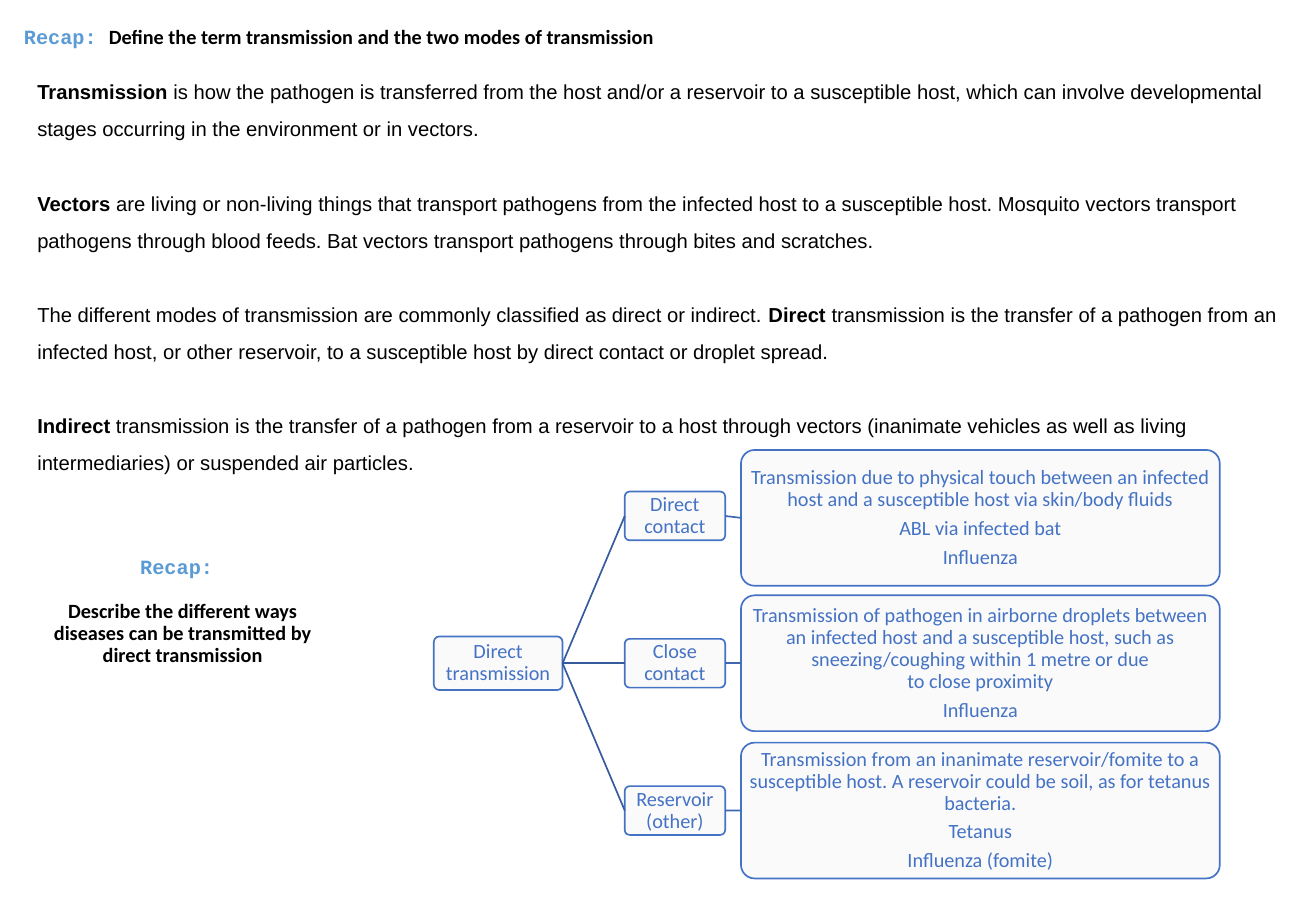
from lxml import etree
from pptx import Presentation
from pptx import util as u
from pptx.dml.color import RGBColor
from pptx.enum import shapes, text
from pptx.oxml.ns import qn

BLACK, RECAP_BLUE, TREE_BLUE, BOX_FILL = "000000", "5B9BD5", "4472C4", "FAFAFA"
STEM_BLUE, TWIG_BLUE = "365B9D", "3E67B2"
RIGHT_SITE, LEFT_SITE = 3, 1

# Each paragraph is a list of (words, bold)
DEFINITIONS = [
    [("Transmission", True),
     (" is how the pathogen is transferred from the host and/or a reservoir to a susceptible host, "
      "which can involve developmental stages occurring in the environment or in vectors.", False)],
    [("Vectors", True),
     (" are living or non-living things that transport pathogens from the infected host to a "
      "susceptible host. Mosquito vectors transport pathogens through blood feeds. Bat vectors "
      "transport pathogens through bites and scratches.", False)],
    [("The different modes of transmission are commonly classified as direct or indirect. ", False),
     ("Direct ", True),
     ("transmission is the transfer of a pathogen from an infected host, or other reservoir, to a "
      "susceptible host by direct contact or droplet spread.", False)],
    [("Indirect", True),
     (" transmission is the transfer of a pathogen from a reservoir to a host through vectors "
      "(inanimate vehicles as well as living intermediaries) or suspended air particles.", False)],
]

# Mode, its detail paragraphs, and how far (cm) the detail box sits below the mode
BRANCHES = [
    ("Direct contact",
     ["Transmission due to physical touch between an infected host and a susceptible host "
      "via skin/body fluids", "ABL via infected bat", "Influenza"], 0.04),
    ("Close contact",
     ["Transmission of pathogen in airborne droplets between an infected host and a susceptible "
      "host, such as sneezing/coughing within 1 metre or due\nto close proximity", "Influenza"], 0),
    ("Reservoir (other)",
     ["Transmission from an inanimate reservoir/fomite to a susceptible host. A reservoir could "
      "be soil, as for tetanus bacteria.", "Tetanus", "Influenza (fomite)"], 0),
]


def colour(hex_string):
    return RGBColor.from_string(hex_string)


def lengths(box):
    return [u.Cm(value) for value in box]


def add_run(paragraph, words, font, hex_string, bold):
    run = paragraph.add_run()
    run.text = words
    style_run(run, font, hex_string, bold)


def style_run(run, font, hex_string, bold=False):
    run.font.name, run.font.size, run.font.bold = font, u.Pt(12), bold
    run.font.color.rgb = colour(hex_string)


def add_heading(slide, box):
    frame = slide.shapes.add_textbox(*lengths(box)).text_frame
    frame.word_wrap = True
    frame.vertical_anchor = text.MSO_ANCHOR.MIDDLE
    paragraph = frame.paragraphs[0]
    paragraph.line_spacing = 0.9
    add_run(paragraph, "Recap: ", "Courier New", RECAP_BLUE, True)
    add_run(paragraph, "Define the term transmission and the two modes of transmission",
            "Calibri", BLACK, True)


def add_definitions(slide, box):
    frame = slide.shapes.add_textbox(*lengths(box)).text_frame
    frame.word_wrap = True
    for index, parts in enumerate(DEFINITIONS):
        paragraph = frame.paragraphs[0] if index == 0 else frame.add_paragraph()
        paragraph.line_spacing = u.Pt(22)
        paragraph.space_before = u.Pt(22 if index else 0)
        for words, bold in parts:
            add_run(paragraph, words, "Arial", BLACK, bold)


def fill_title(slide, box):
    title = slide.shapes.title
    title.left, title.top, title.width, title.height = lengths(box)
    frame = title.text_frame
    frame.word_wrap = True
    frame.auto_size = text.MSO_AUTO_SIZE.NONE
    frame.vertical_anchor = text.MSO_ANCHOR.MIDDLE
    recap, task = frame.paragraphs[0], frame.add_paragraph()
    add_run(recap, "Recap: ", "Courier New", RECAP_BLUE, True)
    add_run(task, "Describe the different ways diseases can be transmitted by direct transmission",
            "Calibri", BLACK, True)
    for paragraph in (recap, task):
        paragraph.alignment = text.PP_ALIGN.CENTER
        paragraph.line_spacing = 0.9
        paragraph.space_before = u.Pt(0)
    recap.space_after = u.Pt(13)


def add_node(slide, left, middle, width, height, lines):
    """Add a rounded box centred vertically on middle."""
    node = slide.shapes.add_shape(shapes.MSO_SHAPE.ROUNDED_RECTANGLE,
                                  *lengths((left, middle - height / 2, width, height)))
    node.adjustments[0] = 0.1
    node.shadow.inherit = False
    node.fill.solid()
    node.fill.fore_color.rgb = colour(BOX_FILL)
    node.line.color.rgb = colour(TREE_BLUE)
    node.line.width = u.Pt(1)
    frame = node.text_frame
    frame.word_wrap = True
    frame.vertical_anchor = text.MSO_ANCHOR.MIDDLE
    frame.margin_left = frame.margin_right = frame.margin_top = frame.margin_bottom = u.Cm(0.03)
    for index, line in enumerate(lines):
        paragraph = frame.paragraphs[0] if index == 0 else frame.add_paragraph()
        paragraph.text = line
        paragraph.alignment = text.PP_ALIGN.CENTER
        paragraph.line_spacing = 0.9
        paragraph.space_after = u.Pt(4.2)
        for run in paragraph.runs:
            style_run(run, "Calibri", TREE_BLUE)
    return node


def link(slide, parent, child, hex_string):
    connector = slide.shapes.add_connector(shapes.MSO_CONNECTOR.STRAIGHT, 0, 0, 0, 0)
    connector.begin_connect(parent, RIGHT_SITE)
    connector.end_connect(child, LEFT_SITE)
    connector.line.color.rgb = colour(hex_string)
    connector.line.width = u.Pt(1)
    etree.SubElement(connector._element.spPr, qn("a:effectLst"))


def add_transmission_tree(slide, box):
    left, top, width, height = box
    detail_width, detail_height = 10.01, 2.84
    row_pitch = (height - detail_height) / (len(BRANCHES) - 1)
    root = add_node(slide, left, top + height / 2, 2.69, 1.12, ["Direct transmission"])
    for row, (mode, details, drop) in enumerate(BRANCHES):
        middle = top + detail_height / 2 + row * row_pitch
        mode_node = add_node(slide, left + 3.99, middle, 2.1, 1.02, [mode])
        detail_node = add_node(slide, left + width - detail_width, middle + drop,
                               detail_width, detail_height, details)
        link(slide, root, mode_node, STEM_BLUE)
        link(slide, mode_node, detail_node, TWIG_BLUE)


def main():
    presentation = Presentation()
    presentation.slide_width, presentation.slide_height = u.Cm(27.51), u.Cm(19.05)
    title_only = presentation.slide_layouts[5]
    slide = presentation.slides.add_slide(title_only)
    add_heading(slide, (0.25, -1.27, 25.76, 4.11))
    add_definitions(slide, (0.53, 1.27, 26.44, 8.79))
    fill_title(slide, (0.53, 10.74, 6.58, 4.11))
    add_transmission_tree(slide, (9.07, 9.37, 16.43, 9))
    presentation.save("out.pptx")


if __name__ == "__main__":
    main()
